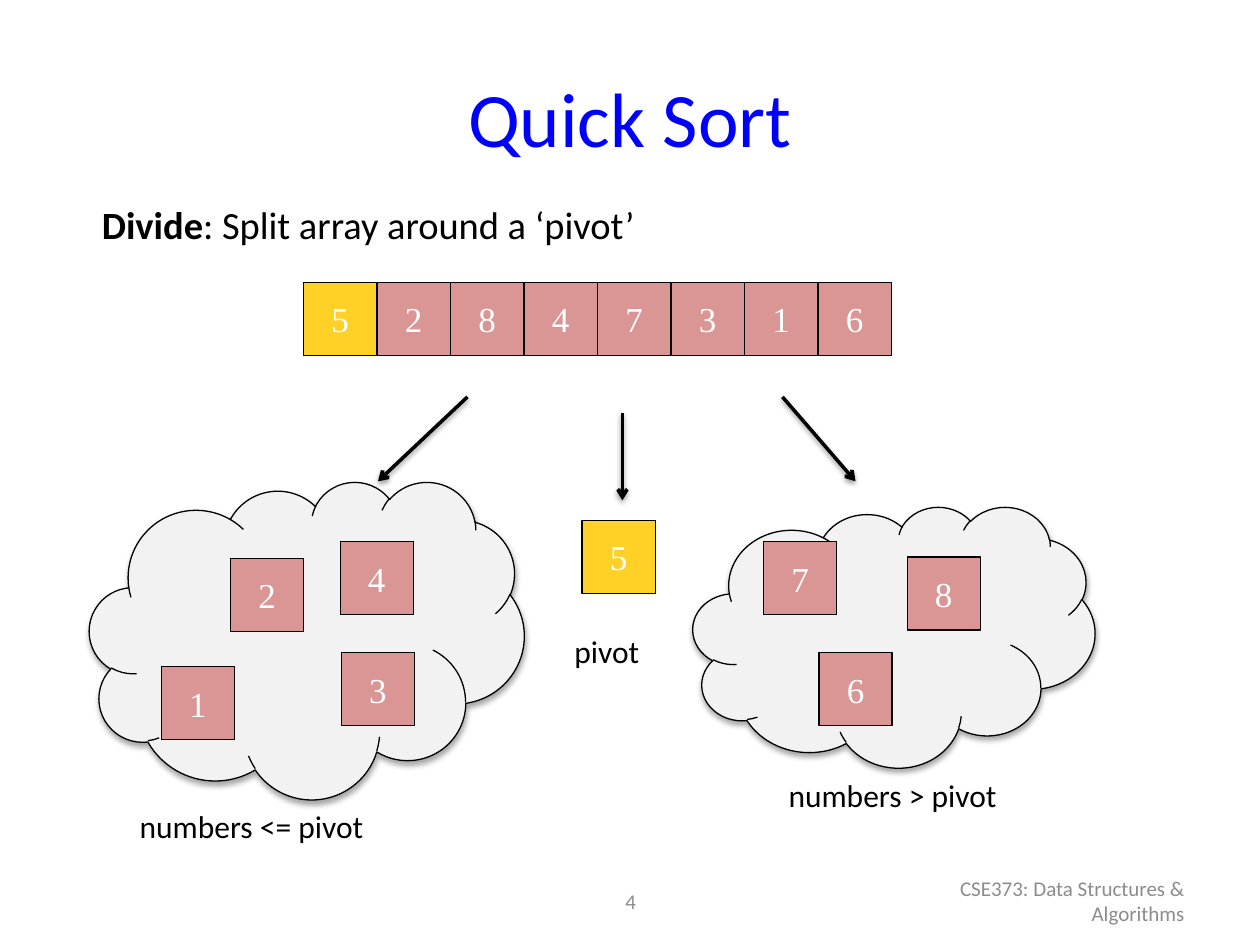
from dataclasses import dataclass
from typing import NamedTuple

from lxml.etree import SubElement
from pptx import Presentation
from pptx.dml.color import RGBColor
from pptx.enum.shapes import MSO_CONNECTOR, MSO_SHAPE
from pptx.enum.text import MSO_ANCHOR, MSO_AUTO_SIZE, PP_ALIGN
from pptx.oxml.ns import qn
from pptx.util import Inches, Pt


@dataclass(frozen=True)
class Theme:
    sans: str = "Calibri"
    serif: str = "Times New Roman"
    black: str = "000000"
    white: str = "FFFFFF"
    blue: str = "0000FF"
    gray: str = "8C8C8C"
    cloud: str = "F2F2F2"
    gold: str = "FFD025"
    rose: str = "D99694"
    title: int = 44
    lead: int = 22
    digit: int = 20
    label: int = 18
    foot: int = 12
    thin: float = 0.75
    thick: float = 2


class Box(NamedTuple):
    x: float
    y: float
    w: float
    h: float


class Cell(NamedTuple):
    digit: str
    x: float
    y: float
    pivot: bool = False


class Arrow(NamedTuple):
    x1: float
    y1: float
    x2: float
    y2: float


class Label(NamedTuple):
    text: str
    box: Box


T = Theme()
SIDE = 0.58
STEP = 7 / 12
ROW_X, ROW_Y = 2.41, 2.24

CLOUDS = [Box(5.5, 4.02, 3.19, 2.07), Box(0.71, 3.82, 3.45, 2.52)]
ARRAY = [Cell(d, ROW_X + i * STEP, ROW_Y, i == 0)
         for i, d in enumerate("52847316")]
PARTS = [
    Cell("5", 4.62, 4.13, True),
    Cell("2", 1.83, 4.43), Cell("4", 2.7, 4.3),
    Cell("3", 2.71, 5.18), Cell("1", 1.28, 5.29),
    Cell("7", 6.06, 4.3), Cell("6", 6.5, 5.18), Cell("8", 7.2, 4.42),
]
ARROWS = [
    Arrow(3.71, 3.15, 3, 3.82),
    Arrow(6.21, 3.15, 6.79, 3.82),
    Arrow(4.94, 3.28, 4.94, 3.97),
]
LABELS = [
    Label("numbers <= pivot", Box(1.01, 6.36, 2.02, 0.4)),
    Label("numbers > pivot", Box(6.16, 6.11, 2.02, 0.4)),
    Label("pivot", Box(4.46, 4.97, 0.72, 0.4)),
]


def rgb(color: str) -> RGBColor:
    return RGBColor.from_string(color)


def write(frame, *texts: str, size: int, color: str = T.black,
          font: str = T.sans, align=PP_ALIGN.LEFT, anchor=MSO_ANCHOR.TOP,
          wrap: bool = True, lead: bool = False) -> None:
    """Write texts as runs of one paragraph; lead makes the first one bold."""
    frame.word_wrap = wrap
    frame.vertical_anchor = anchor
    para = frame.paragraphs[0]
    para.alignment = align
    for i, text in enumerate(texts):
        run = para.add_run()
        run.text = text
        run.font.name = font
        run.font.size = Pt(size)
        run.font.bold = lead and i == 0
        run.font.color.rgb = rgb(color)


def add_text(slide, box: Box, *texts: str, grow: bool = False, **style) -> None:
    frame = slide.shapes.add_textbox(*map(Inches, box)).text_frame
    write(frame, *texts, **style)
    if grow:
        frame.auto_size = MSO_AUTO_SIZE.SHAPE_TO_FIT_TEXT


def add_shape(slide, kind, box: Box, fill: str):
    shape = slide.shapes.add_shape(kind, *map(Inches, box))
    shape.shadow.inherit = False
    shape.fill.solid()
    shape.fill.fore_color.rgb = rgb(fill)
    shape.line.color.rgb = rgb(T.black)
    shape.line.width = Pt(T.thin)
    return shape


def cast(shape, alpha: int, drop: float) -> None:
    """Give a shape or connector a soft shadow straight below it."""
    props = shape._element.spPr
    effects = props.find(qn("a:effectLst"))
    if effects is None:
        effects = SubElement(props, qn("a:effectLst"))
    outer = SubElement(effects, qn("a:outerShdw"), blurRad=str(Pt(3.1)),
                       dist=str(Pt(drop)), dir="5400000", rotWithShape="0")
    tint = SubElement(outer, qn("a:srgbClr"), val=T.black)
    SubElement(tint, qn("a:alpha"), val=str(alpha * 1000))


def add_cell(slide, cell: Cell) -> None:
    shape = add_shape(slide, MSO_SHAPE.RECTANGLE,
                      Box(cell.x, cell.y, SIDE, SIDE),
                      T.gold if cell.pivot else T.rose)
    write(shape.text_frame, cell.digit, size=T.digit, color=T.white,
          font=T.serif, align=PP_ALIGN.CENTER, anchor=MSO_ANCHOR.MIDDLE,
          wrap=False)


def add_arrow(slide, arrow: Arrow) -> None:
    link = slide.shapes.add_connector(MSO_CONNECTOR.STRAIGHT,
                                      *map(Inches, arrow))
    link.line.color.rgb = rgb(T.black)
    link.line.width = Pt(T.thick)
    SubElement(link.line._get_or_add_ln(), qn("a:tailEnd"), type="arrow")
    cast(link, alpha=38, drop=1.6)


def main() -> None:
    deck = Presentation()
    deck.slide_width, deck.slide_height = Inches(10), Inches(7.5)
    slide = deck.slides.add_slide(deck.slide_layouts[5])

    # Title and lead line
    title = slide.shapes.title
    title.left, title.top, title.width, title.height = map(
        Inches, Box(0.5, 0.3, 9, 1.25))
    write(title.text_frame, "Quick Sort", size=T.title, color=T.blue,
          align=PP_ALIGN.CENTER, anchor=MSO_ANCHOR.MIDDLE)
    add_text(slide, Box(0.71, 1.55, 5.79, 0.47), "Divide",
             ": Split array around a ‘pivot’", size=T.lead, lead=True,
             grow=True)

    # Clouds behind the two halves
    for box in CLOUDS:
        cast(add_shape(slide, MSO_SHAPE.CLOUD, box, T.cloud),
             alpha=35, drop=1.8)

    # Array, with the pivot cell on top, then the split numbers
    for cell in ARRAY[1:] + ARRAY[:1] + PARTS:
        add_cell(slide, cell)
    for arrow in ARROWS:
        add_arrow(slide, arrow)
    for label in LABELS:
        add_text(slide, label.box, label.text, size=T.label, grow=True)

    # Footer
    foot = dict(size=T.foot, color=T.gray, anchor=MSO_ANCHOR.MIDDLE)
    add_text(slide, Box(3.42, 6.95, 3.17, 0.4), "4",
             align=PP_ALIGN.CENTER, **foot)
    add_text(slide, Box(7.17, 6.95, 2.33, 0.4),
             "CSE373: Data Structures & Algorithms",
             align=PP_ALIGN.RIGHT, **foot)

    deck.save("out.pptx")


if __name__ == "__main__":
    main()
